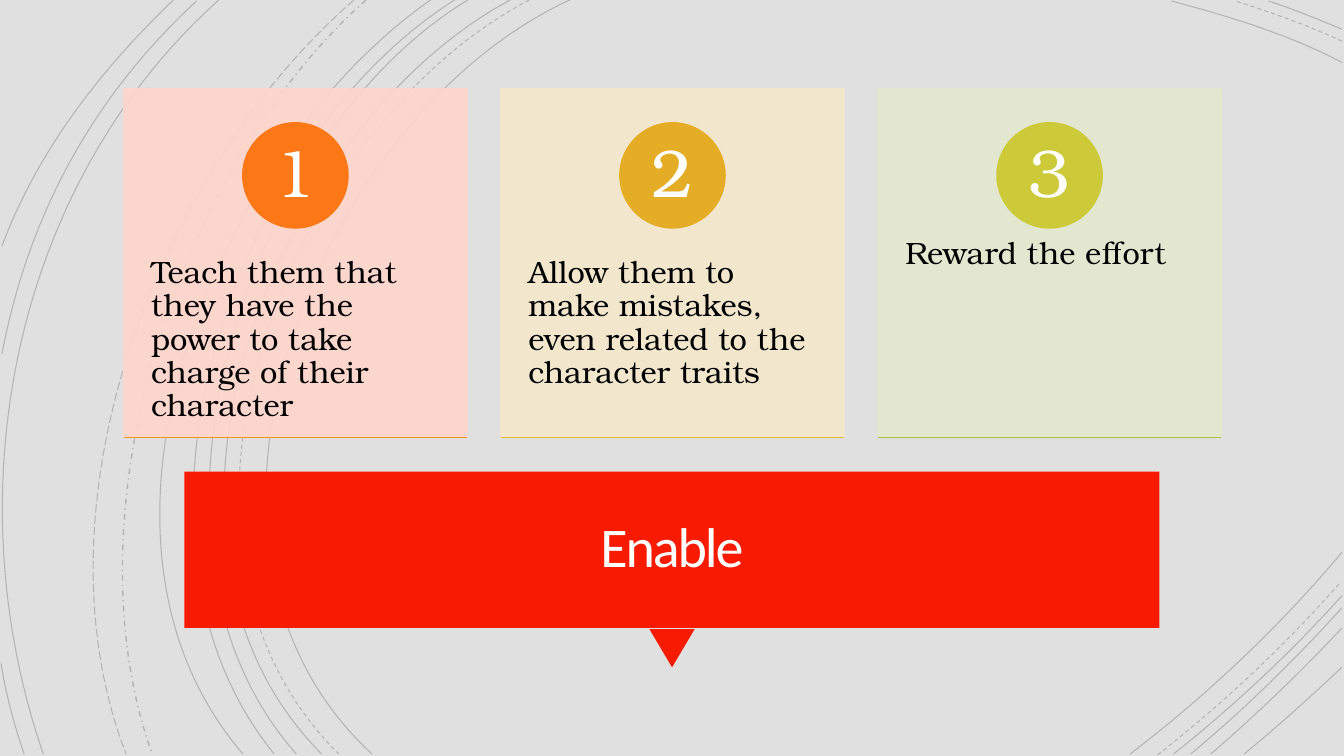
from lxml import etree
from pptx import Presentation
from pptx.dml.color import RGBColor
from pptx.enum.dml import MSO_LINE
from pptx.enum.shapes import MSO_CONNECTOR, MSO_SHAPE
from pptx.enum.text import MSO_ANCHOR, PP_ALIGN
from pptx.oxml.ns import qn
from pptx.util import Pt

PX = 9144  # EMU per px, 100 px to the inch
SLIDE_W, SLIDE_H = 1333, 750
SERIF, SANS = "TeX Gyre Bonum", "Calibri"

GREY = RGBColor(0xE0, 0xE0, 0xE0)
RED = RGBColor(0xF8, 0x1B, 0x02)
BLACK = RGBColor(0x00, 0x00, 0x00)
WHITE = RGBColor(0xFF, 0xFF, 0xFF)
TITLE_WHITE = RGBColor(0xFF, 0xFE, 0xFF)
PINK = RGBColor(0xFE, 0xD6, 0xCC)
CREAM = RGBColor(0xF4, 0xE8, 0xCC)
SAGE = RGBColor(0xE4, 0xE8, 0xCF)
ORANGE = RGBColor(0xFC, 0x77, 0x15)
GOLD = RGBColor(0xE5, 0xAC, 0x26)
LIME = RGBColor(0xCC, 0xCA, 0x38)
AMBER = RGBColor(0xF0, 0x94, 0x1D)
MUSTARD = RGBColor(0xD8, 0xBE, 0x2E)
GREEN = RGBColor(0xAF, 0xBF, 0x41)

# Text, card colour, badge colour, base line colour
CARDS = [
    ("Teach them that they have the power to take charge of their character",
     PINK, ORANGE, AMBER),
    ("Allow them to make mistakes, even related to the character traits",
     CREAM, GOLD, MUSTARD),
    ("Reward the effort", SAGE, LIME, GREEN),
]

# Start, two control points and end of each background curve, by dash style
CURVES = {
    MSO_LINE.SOLID: [
        [(565, 0), (315, 115), (143, 540), (369, 748)],
        [(506, 0), (270, 127), (110, 537), (319, 748)],
        [(464, 0), (244, 133), (110, 541), (294, 748)],
        [(451, 0), (231, 138), (97, 533), (272, 748)],
        [(427, 0), (217, 147), (53, 529), (241, 748)],
        [(217, 0), (11, 185), (-46, 490), (43, 748)],
        [(195, 1), (92, 96), (28, 214), (2, 351)],
        [(172, 0), (100, 69), (37, 150), (2, 244)],
        [(1, 658), (6, 689), (14, 719), (24, 748)],
        [(1331, 62), (1278, 34), (1218, 16), (1162, 1)],
        [(1331, 29), (1307, 19), (1283, 9), (1258, 1)],
        [(1121, 748), (1197, 690), (1269, 622), (1331, 548)],
        [(1164, 748), (1223, 701), (1280, 648), (1331, 591)],
        [(1181, 748), (1234, 704), (1284, 655), (1331, 603)],
        [(1201, 748), (1246, 709), (1290, 667), (1331, 623)],
        [(1234, 748), (1267, 721), (1299, 692), (1331, 662)],
    ],
    MSO_LINE.DASH: [
        [(525, 0), (285, 125), (123, 537), (336, 748)],
        [(1331, 41), (1297, 25), (1260, 12), (1225, 1)],
        [(1148, 749), (1213, 698), (1275, 640), (1330, 577)],
    ],
    MSO_LINE.DASH_DOT: [[(363, 0), (176, 166), (65, 509), (151, 748)]],
    MSO_LINE.LONG_DASH: [[(351, 0), (157, 169), (29, 499), (125, 748)]],
}


def emu(*lengths):
    return [length * PX for length in lengths]


def set_opacity(shape, percent):
    for color in shape.element.spPr.iter(qn("a:srgbClr")):
        etree.SubElement(color, qn("a:alpha"), val=str(percent * 1000))


def add_filled(slide, kind, box, color, outlined=False):
    shape = slide.shapes.add_shape(kind, *emu(*box))
    shape.shadow.inherit = False
    shape.fill.solid()
    shape.fill.fore_color.rgb = color
    if outlined:
        shape.line.color.rgb = color
        shape.line.width = Pt(1.25)
    else:
        shape.line.fill.background()
    return shape


def add_text(slide, box, text, color, font, frame, paragraph):
    """Place one paragraph; frame, paragraph and font hold format values."""
    text_frame = slide.shapes.add_textbox(*emu(*box)).text_frame
    text_frame.word_wrap = True
    line = text_frame.paragraphs[0]
    run = line.add_run()
    run.text = text
    run.font.color.rgb = color
    for target, values in ((text_frame, frame), (line, paragraph), (run.font, font)):
        for name, value in values.items():
            setattr(target, name, value)
    return run


def margins(across, down):
    return {"margin_left": across * PX, "margin_right": across * PX,
            "margin_top": down * PX, "margin_bottom": down * PX}


def add_curve(slide, points, dash):
    builder = slide.shapes.build_freeform(*points[0], scale=PX)
    builder.add_line_segments(points[1:], close=False)
    curve = builder.convert_to_shape()
    # Turn the three straight segments into one cubic Bézier
    segments = list(curve.element.iter(qn("a:lnTo")))
    bezier = etree.SubElement(segments[0].getparent(), qn("a:cubicBezTo"))
    for segment in segments:
        bezier.append(segment[0])
        segment.getparent().remove(segment)
    curve.shadow.inherit = False
    curve.fill.background()
    curve.line.color.rgb = BLACK
    curve.line.width = Pt(1 if dash == MSO_LINE.DASH_DOT else 0.75)
    curve.line.dash_style = dash
    set_opacity(curve, 20)


def add_background(slide):
    slide.background.fill.solid()
    slide.background.fill.fore_color.rgb = GREY
    for dash, curves in CURVES.items():
        for points in curves:
            add_curve(slide, points, dash)


def add_banner(slide, left, top, width, height):
    pointer_w, pointer_h = 45, 38
    pointer = add_filled(
        slide, MSO_SHAPE.ISOSCELES_TRIANGLE,
        (left + (width - pointer_w) // 2, top + height + 1, pointer_w, pointer_h), RED)
    pointer.rotation = 180
    add_filled(slide, MSO_SHAPE.RECTANGLE, (left, top, width, height), RED)
    title = add_text(
        slide, (left + 9, top + 10, width - 18, height - 18), "Enable", TITLE_WHITE,
        {"name": SANS, "size": Pt(40)},
        {"vertical_anchor": MSO_ANCHOR.MIDDLE, **margins(25, 25)},
        {"alignment": PP_ALIGN.CENTER, "line_spacing": 0.85})
    title.font._element.set("spc", "-150")


def add_card(slide, left, top, width, height, number, content):
    text, card_color, badge_color, base_color = content
    card = add_filled(slide, MSO_SHAPE.RECTANGLE, (left, top, width, height),
                      card_color, outlined=True)
    set_opacity(card, 90)
    add_text(slide, (left, top + 131, width, 208), text, BLACK,
             {"name": SERIF, "size": Pt(22)}, margins(27, 36), {"line_spacing": 0.9})

    badge = 104
    badge_left, badge_top = left + (width - badge) // 2, top + 34
    add_filled(slide, MSO_SHAPE.OVAL, (badge_left, badge_top, badge, badge),
               badge_color, outlined=True)
    add_text(slide, (badge_left + 15, badge_top + 16, 73, 73), str(number), WHITE,
             {"name": SERIF, "size": Pt(48)},
             {"vertical_anchor": MSO_ANCHOR.MIDDLE, **margins(8, 1)},
             {"alignment": PP_ALIGN.CENTER, "line_spacing": 0.9})

    bottom = top + height
    base = slide.shapes.add_connector(
        MSO_CONNECTOR.STRAIGHT, *emu(left, bottom, left + width, bottom))
    base.line.color.rgb = base_color
    base.line.width = Pt(1.25)
    etree.SubElement(base.element.spPr, qn("a:effectLst"))


def add_cards(slide, left, top, card_w, card_h, gap):
    for index, content in enumerate(CARDS):
        add_card(slide, left + index * (card_w + gap), top, card_w, card_h,
                 index + 1, content)


def main():
    presentation = Presentation()
    presentation.slide_width, presentation.slide_height = emu(SLIDE_W, SLIDE_H)
    slide = presentation.slides.add_slide(presentation.slide_layouts[6])
    add_background(slide)
    add_banner(slide, 183, 468, 967, 155)
    add_cards(slide, 123, 88, 340, 346, 34)
    presentation.save("out.pptx")


if __name__ == "__main__":
    main()
